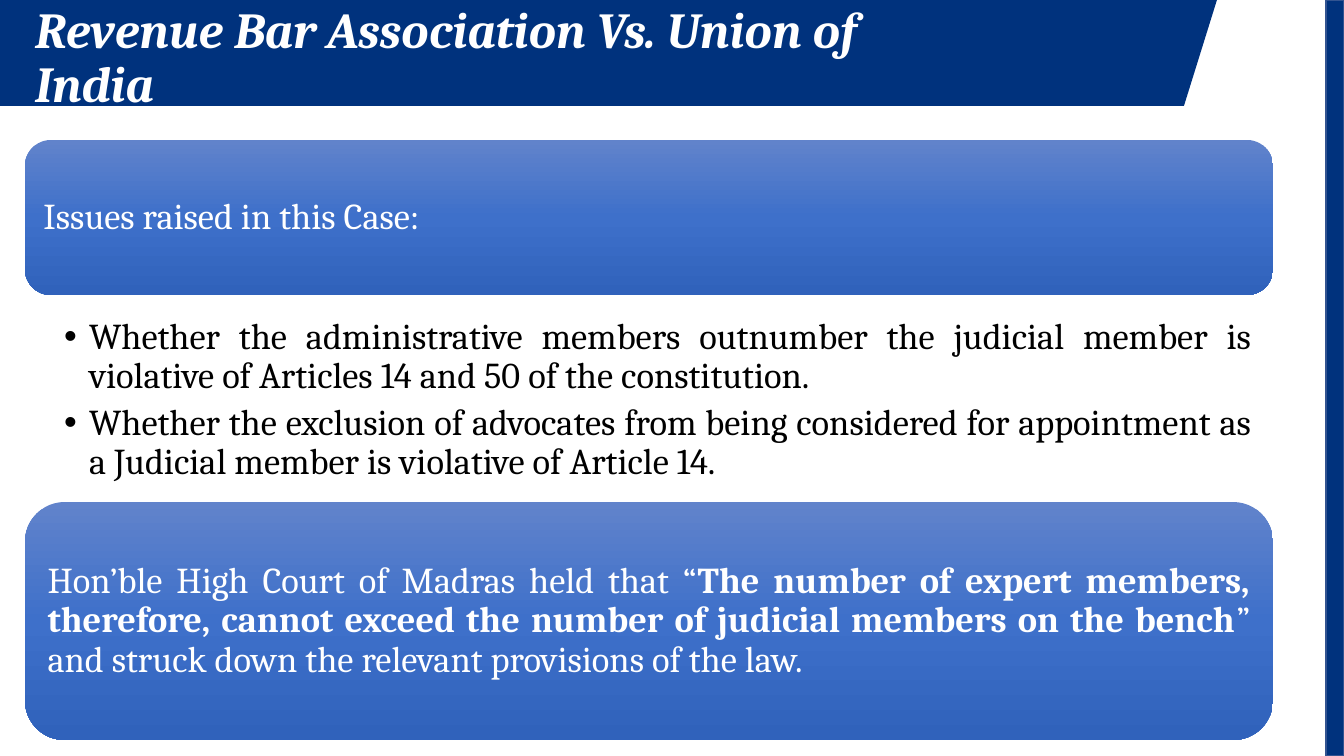
from dataclasses import dataclass

from lxml.etree import SubElement
from pptx import Presentation
from pptx.dml.color import RGBColor
from pptx.enum.shapes import MSO_SHAPE
from pptx.enum.text import MSO_ANCHOR, MSO_AUTO_SIZE, PP_ALIGN
from pptx.oxml.ns import qn
from pptx.util import Emu, Pt

EMU_PER_PX = 914400 / 100.8
FONT = "Cambria"
COLORS = {
    "navy": "00327D",
    "bar edge": "325491",
    "white": "FFFFFF",
    "black": "000000",
    "card top": "6183CB",
    "card middle": "3E70CA",
    "card bottom": "3062BB",
}
CARD_STOPS = {0: "card top", 50: "card middle", 100: "card bottom"}


@dataclass
class Span:
    text: str
    bold: bool = False


@dataclass
class Card:
    top: int
    height: int
    spans: list[Span]


TITLE = "Revenue Bar Association Vs. Union of India"
ISSUES = [
    "Whether the administrative members outnumber the judicial member is "
    "violative of Articles 14 and 50 of the constitution.",
    "Whether the exclusion of advocates from being considered for appointment "
    "as a Judicial member is violative of Article 14.",
]
CARDS = [
    Card(140, 155, [Span("Issues raised in this Case:")]),
    Card(502, 238, [
        Span("Hon’ble High Court of Madras held that “"),
        Span("The number of expert members, therefore, cannot exceed the "
             "number of judicial members on the bench", bold=True),
        Span("” and struck down the relevant provisions of the law."),
    ]),
]
CARD_LEFT, CARD_WIDTH = 25, 1248


def px(length: int) -> Emu:
    return Emu(round(length * EMU_PER_PX))


def color(name: str) -> RGBColor:
    return RGBColor.from_string(COLORS[name])


def place(shape, left: int, top: int, width: int, height: int) -> None:
    shape.left, shape.top = px(left), px(top)
    shape.width, shape.height = px(width), px(height)


def set_frame(shape, insets: tuple[int, int, int, int], anchor=MSO_ANCHOR.TOP):
    frame = shape.text_frame
    frame.word_wrap = True
    frame.auto_size = MSO_AUTO_SIZE.NONE
    frame.vertical_anchor = anchor
    (frame.margin_left, frame.margin_top,
     frame.margin_right, frame.margin_bottom) = map(px, insets)
    return frame


def write(para, spans: list[Span], *, size: int = 26, ink: str = "white",
          italic: bool = False, align=PP_ALIGN.JUSTIFY,
          before: float = 0, after: float = 0) -> None:
    para.alignment = align
    para.line_spacing = 0.9
    para.space_before, para.space_after = Pt(before), Pt(after)
    for span in spans:
        run = para.add_run()
        run.text = span.text
        run.font.name, run.font.size = FONT, Pt(size)
        run.font.bold, run.font.italic = span.bold, italic
        run.font.color.rgb = color(ink)


def paint_gradient(shape) -> None:
    shape.fill.gradient()
    shape.fill.gradient_angle = 270
    stops = shape._element.spPr.find(qn("a:gradFill")).find(qn("a:gsLst"))
    for stop in list(stops):
        stops.remove(stop)
    for percent, name in CARD_STOPS.items():
        stop = SubElement(stops, qn("a:gs"), pos=str(percent * 1000))
        SubElement(stop, qn("a:srgbClr"), val=COLORS[name])


def draw_frame(page) -> None:
    # Slanted header band
    builder = page.shapes.build_freeform(0, 0, scale=EMU_PER_PX)
    builder.add_line_segments([(0, 106), (1184, 106), (1217, 0)], close=True)
    band = builder.convert_to_shape()
    band.line.fill.background()

    # Right-hand bar
    bar = page.shapes.add_shape(MSO_SHAPE.RECTANGLE, px(1326), 0, px(18), px(756))
    bar.line.color.rgb = color("bar edge")
    bar.line.width = Pt(1)

    # Both lie behind the placeholders
    for depth, shape in enumerate((band, bar), start=2):
        shape.shadow.inherit = False
        shape.fill.solid()
        shape.fill.fore_color.rgb = color("navy")
        page.shapes._spTree.insert(depth, shape._element)


def draw_title(page) -> None:
    title = page.shapes.title
    place(title, 25, 0, 926, 65)
    frame = set_frame(title, (10, 5, 10, 5))
    write(frame.paragraphs[0], [Span(TITLE, bold=True)], size=36,
          italic=True, align=PP_ALIGN.LEFT, before=10)


def draw_issues(page) -> None:
    body = page.placeholders[1]
    place(body, CARD_LEFT, 314, CARD_WIDTH, 170)
    frame = set_frame(body, (39, 4, 20, 4))
    for number, issue in enumerate(ISSUES):
        para = frame.add_paragraph() if number else frame.paragraphs[0]
        write(para, [Span(issue)], ink="black", after=5.5)
        properties = para._p.get_or_add_pPr()
        properties.set("marL", str(px(25)))
        properties.set("indent", str(-px(25)))


def draw_card(page, card: Card) -> None:
    box = page.shapes.add_shape(MSO_SHAPE.ROUNDED_RECTANGLE, 0, 0, 0, 0)
    place(box, CARD_LEFT, card.top, CARD_WIDTH, card.height)
    box.shadow.inherit = False
    box.line.fill.background()
    paint_gradient(box)
    frame = set_frame(box, (11, 11, 11, 11), MSO_ANCHOR.MIDDLE)
    write(frame.paragraphs[0], card.spans)


def main() -> None:
    deck = Presentation()
    deck.slide_width, deck.slide_height = px(1344), px(756)
    page = deck.slides.add_slide(deck.slide_layouts[1])
    draw_frame(page)
    draw_title(page)
    draw_issues(page)
    for card in CARDS:
        draw_card(page, card)
    deck.save("out.pptx")


if __name__ == "__main__":
    main()
